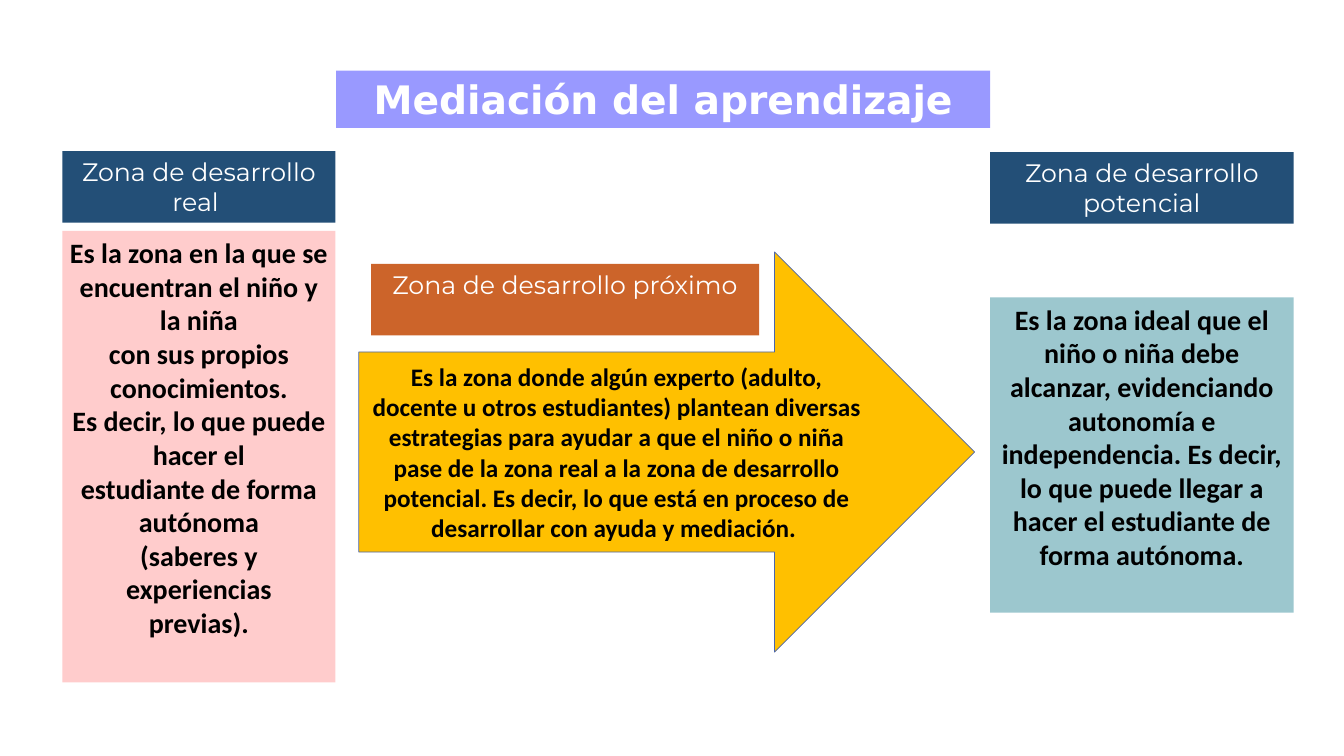
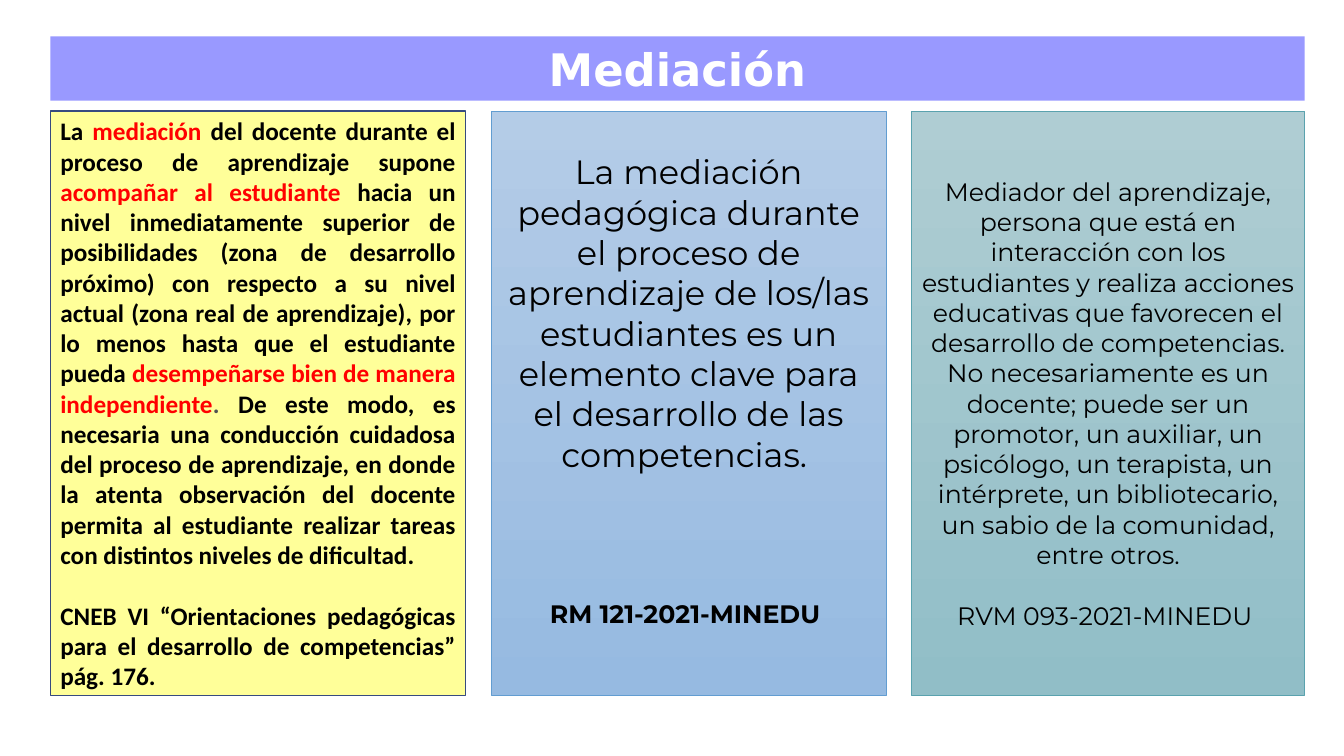
from dataclasses import dataclass

from pptx import Presentation
from pptx.dml.color import RGBColor
from pptx.enum.shapes import MSO_SHAPE
from pptx.enum.text import MSO_ANCHOR, MSO_AUTO_SIZE, PP_ALIGN
from pptx.util import Inches, Pt

SLIDE_WIDTH, SLIDE_HEIGHT = Inches(13.33), Inches(7.5)
RECTANGLE, RIGHT_ARROW = MSO_SHAPE.RECTANGLE, MSO_SHAPE.RIGHT_ARROW
TOP, MIDDLE = MSO_ANCHOR.TOP, MSO_ANCHOR.MIDDLE
CENTER, JUSTIFY = PP_ALIGN.CENTER, PP_ALIGN.JUSTIFY
NO_AUTOFIT = MSO_AUTO_SIZE.NONE
TITLE_ONLY = 5


@dataclass(frozen=True)
class Theme:
    """Colours, fonts and type sizes shared by the slides."""
    white: str = "FFFFFF"
    ink: str = "000000"
    accent: str = "FF0000"
    grey: str = "4F5253"
    title_band: str = "9999FF"
    navy: str = "234F77"
    orange: str = "CC642A"
    pink: str = "FFCCCC"
    aqua: str = "9CC7CE"
    amber: str = "FFC000"
    arrow_line: str = "4A66AC"
    yellow: str = "FFFF99"
    yellow_line: str = "374B7F"
    blue: tuple = ("B4CCE7", "96BAE1")
    blue_line: str = "629DD1"
    teal: tuple = ("AFCDD3", "91BEC7")
    teal_line: str = "5AA2AE"
    title_font: str = "DejaVu Sans"
    label_font: str = "Montserrat"
    body_font: str = "Calibri"
    text: int = 18
    zone_text: int = 20
    lead: int = 24
    label_height: float = 9.47


THEME = Theme()


@dataclass(frozen=True)
class Box:
    """A region in percent of the slide's width and height."""
    left: float
    top: float
    width: float
    height: float

    def place(self, shape):
        """Move a shape onto this region."""
        shape.left, shape.top, shape.width, shape.height = self.lengths()

    def lengths(self):
        """Return the region as slide lengths."""
        return (int(SLIDE_WIDTH * self.left / 100), int(SLIDE_HEIGHT * self.top / 100),
                int(SLIDE_WIDTH * self.width / 100), int(SLIDE_HEIGHT * self.height / 100))


@dataclass(frozen=True)
class Style:
    """The look of a text: font, size, colour, weight and alignment."""
    font: str
    size: int
    color: str = THEME.ink
    bold: bool = False
    align: PP_ALIGN = CENTER


LABEL = Style(THEME.label_font, THEME.text, THEME.white)
ZONE = Style(THEME.body_font, THEME.zone_text, bold=True)
ARROW = Style(THEME.body_font, THEME.text, bold=True)
QUOTE = Style(THEME.body_font, THEME.text, bold=True, align=JUSTIFY)
LEAD = Style(THEME.label_font, THEME.lead)
NOTE = Style(THEME.label_font, THEME.text)
NOTE_BOLD = Style(THEME.label_font, THEME.text, bold=True)


def paint(shape, fill, line=None, line_width=0.5):
    """Give a shape a plain or two-colour fill and an optional outline."""
    if isinstance(fill, tuple):
        shape.fill.gradient()
        shape.fill.gradient_angle = 270
        for stop, color in zip(shape.fill.gradient_stops, fill):
            stop.color.rgb = RGBColor.from_string(color)
    else:
        shape.fill.solid()
        shape.fill.fore_color.rgb = RGBColor.from_string(fill)
    if line:
        shape.line.color.rgb = RGBColor.from_string(line)
        shape.line.width = Pt(line_width)
    else:
        shape.line.fill.background()


def set_frame(shape, anchor=TOP, side=0.1, top=0.05, bottom=0.05):
    """Set wrapping, anchor and insets, and return the text frame."""
    frame = shape.text_frame
    frame.word_wrap = True
    frame.auto_size = NO_AUTOFIT
    frame.vertical_anchor = anchor
    frame.margin_left = frame.margin_right = Inches(side)
    frame.margin_top, frame.margin_bottom = Inches(top), Inches(bottom)
    return frame


def write(frame, paragraphs):
    """Write (style, space before, runs) paragraphs, each run as (text, colour)."""
    for index, (style, space, runs) in enumerate(paragraphs):
        paragraph = frame.add_paragraph() if index else frame.paragraphs[0]
        paragraph.alignment = style.align
        paragraph.space_before = Pt(space)
        for text, color in runs:
            run = paragraph.add_run()
            run.text = text
            run.font.name = style.font
            run.font.size = Pt(style.size)
            run.font.bold = style.bold
            run.font.color.rgb = RGBColor.from_string(color)


def plain(style, text, space=0):
    """Return a paragraph of one run in the style's own colour."""
    return style, space, [(text, style.color)]


def add_panel(slide, box, fill, paragraphs, line=None, line_width=0.5,
              kind=RECTANGLE, **frame_options):
    """Add a filled shape that carries text."""
    shape = slide.shapes.add_shape(kind, *box.lengths())
    shape.shadow.inherit = False
    paint(shape, fill, line, line_width)
    write(set_frame(shape, **frame_options), paragraphs)


def add_titled_slide(presentation, box, title, size):
    """Add a title-only slide with its title on a coloured band."""
    slide = presentation.slides.add_slide(presentation.slide_layouts[TITLE_ONLY])
    shape = slide.shapes.title
    box.place(shape)
    paint(shape, THEME.title_band)
    style = Style(THEME.title_font, size, THEME.white, True)
    write(set_frame(shape), [plain(style, title)])
    return slide


def add_label(slide, left, top, width, fill, text):
    """Add the coloured heading of a zone."""
    box = Box(left, top, width, THEME.label_height)
    add_panel(slide, box, fill, [plain(LABEL, text)])


def add_zone(slide, box, gap, label, fill, lines):
    """Add a side zone: heading on top and description below the gap."""
    add_label(slide, box.left, box.top, box.width, THEME.navy, label)
    offset = THEME.label_height + gap
    body = Box(box.left, box.top + offset, box.width, box.height - offset)
    add_panel(slide, body, fill, [plain(ZONE, line) for line in lines], side=0.05)


def add_arrow_zone(slide, box, label, text):
    """Add the middle zone: an arrow with its heading above the shaft."""
    add_label(slide, box.left + 0.02 * box.width, box.top + 0.03 * box.height,
              0.63 * box.width, THEME.orange, label)
    add_panel(slide, box, THEME.amber, [plain(ARROW, text)], THEME.arrow_line,
              kind=RIGHT_ARROW, anchor=MIDDLE)


def build_zones_slide(presentation):
    """Build the slide of the three zones of development."""
    slide = add_titled_slide(presentation, Box(25, 9.33, 48.67, 7.6),
                             "Mediación del aprendizaje", 28)
    add_zone(slide, Box(4.65, 20, 20.3, 70.27), 1.06, "Zona de desarrollo real ", THEME.pink, [
        "Es la zona en la que se",
        "encuentran el niño y la niña",
        "con sus propios conocimientos.",
        "Es decir, lo que puede hacer el",
        "estudiante de forma autónoma",
        "(saberes y experiencias",
        "previas).",
    ])
    add_zone(slide, Box(73.67, 20.13, 22.58, 60.93), 9.73, "Zona de desarrollo potencial",
             THEME.aqua, [
                 "Es la zona ideal que el niño o niña debe alcanzar, evidenciando "
                 "autonomía e independencia. Es decir, lo que puede llegar a hacer "
                 "el estudiante de forma autónoma."])
    add_arrow_zone(
        slide, Box(26.7, 33.33, 45.82, 52.93), "Zona de desarrollo próximo",
        "Es la zona donde algún experto (adulto, docente u otros estudiantes) plantean "
        "diversas estrategias para ayudar a que el niño o niña pase de la zona real a la "
        "zona de desarrollo potencial. Es decir, lo que está en proceso de desarrollar "
        "con ayuda y mediación. ")


def add_columns(slide, box, gap, columns):
    """Lay out panels side by side, each with its share of the free width."""
    free = box.width - gap * (len(columns) - 1)
    total = sum(share for share, _ in columns)
    left = box.left
    for share, options in columns:
        width = free * share / total
        add_panel(slide, Box(left, box.top, width, box.height), **options)
        left += width + gap


def build_mediation_slide(presentation):
    """Build the slide of the three definitions of mediation."""
    slide = add_titled_slide(presentation, Box(3.75, 4.8, 93.32, 8.53), "Mediación", 32)
    quote = [
        ("La ", THEME.ink),
        ("mediación ", THEME.accent),
        ("del docente durante el proceso de aprendizaje supone ", THEME.ink),
        ("acompañar al estudiante ", THEME.accent),
        ("hacia un nivel inmediatamente superior de posibilidades (zona de desarrollo "
         "próximo) con respecto a su nivel actual (zona real de aprendizaje), por lo "
         "menos hasta que el estudiante pueda ", THEME.ink),
        ("desempeñarse bien de manera independiente", THEME.accent),
        (". ", THEME.grey),
        ("De este modo, es necesaria una conducción cuidadosa del proceso de "
         "aprendizaje, en donde la atenta observación del docente permita al estudiante "
         "realizar tareas con distintos niveles de dificultad. ", THEME.ink),
    ]
    source = ("CNEB VI “Orientaciones pedagógicas para el desarrollo de competencias” "
              "pág. 176.")
    lead = ("La mediación pedagógica durante el proceso de aprendizaje de los/las "
            "estudiantes es un elemento clave para el desarrollo de las competencias. ")
    mediator = ("Mediador del aprendizaje, persona que está en interacción con los "
                "estudiantes y realiza acciones educativas que favorecen el desarrollo de "
                "competencias. No necesariamente es un docente; puede ser un promotor, un "
                "auxiliar, un psicólogo, un terapista, un intérprete, un bibliotecario, "
                "un sabio de la comunidad, entre otros.")
    add_columns(slide, Box(3.75, 14.67, 93.32, 77.33), 1.88, [
        (4.12, dict(fill=THEME.yellow, line=THEME.yellow_line, line_width=1,
                    anchor=MIDDLE, top=0, bottom=0,
                    paragraphs=[(QUOTE, 0, quote), plain(QUOTE, source, 22)])),
        (3.92, dict(fill=THEME.blue, line=THEME.blue_line, top=0.4,
                    paragraphs=[plain(LEAD, lead),
                                plain(NOTE_BOLD, "RM 121-2021-MINEDU ", 89)])),
        (3.9, dict(fill=THEME.teal, line=THEME.teal_line, anchor=MIDDLE,
                   paragraphs=[plain(NOTE, mediator),
                               plain(NOTE, "RVM 093-2021-MINEDU ", 22)])),
    ])


def main():
    """Build and save the presentation."""
    presentation = Presentation()
    presentation.slide_width, presentation.slide_height = SLIDE_WIDTH, SLIDE_HEIGHT
    build_zones_slide(presentation)
    build_mediation_slide(presentation)
    presentation.save("out.pptx")


if __name__ == "__main__":
    main()
